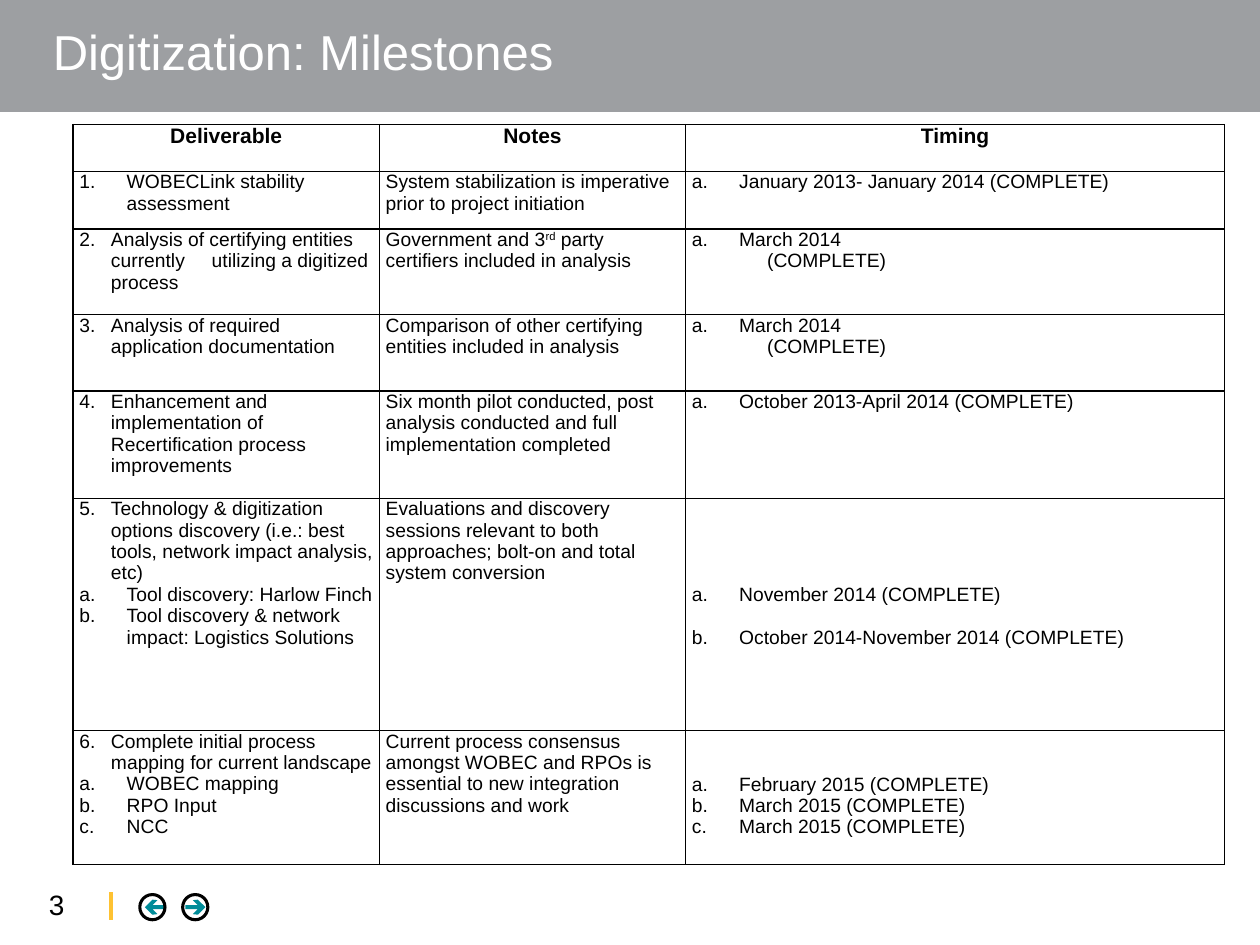
from collections import namedtuple

from lxml.etree import SubElement
from pptx import Presentation
from pptx.dml.color import RGBColor
from pptx.enum.shapes import MSO_CONNECTOR, MSO_SHAPE
from pptx.enum.text import MSO_ANCHOR, PP_ALIGN
from pptx.oxml.ns import qn
from pptx.util import Pt

Item = namedtuple("Item", "text scheme start left hanging before", defaults=(None, 1, 0, 0, 0))
LINE = 12.3


def color(hex_value):
    return RGBColor.from_string(hex_value)


def step(number, text, left=18):
    return Item(text, "arabicPeriod", number, left, left)


def letter(text, before=0):
    return Item(text, "alphaLcPeriod", 1, 27, 27, before)


class MilestoneSlide:
    font = "Arial"
    black = "000000"
    white = "FFFFFF"
    gray = "9D9FA2"
    teal = "008C99"
    yellow = "FEC232"

    def __init__(self, slide):
        self.shapes = slide.shapes

    def style(self, paragraph, size, ink, bold=False):
        paragraph.font.name = self.font
        paragraph.font.size = Pt(size)
        paragraph.font.bold = bold
        paragraph.font.color.rgb = color(ink)

    def text(self, content, x, y, width, height, size, ink, spacing=1.0):
        frame = self.shapes.add_textbox(Pt(x), Pt(y), Pt(width), Pt(height)).text_frame
        frame.margin_left = frame.margin_right = frame.margin_top = frame.margin_bottom = 0
        frame.word_wrap = True
        frame.vertical_anchor = MSO_ANCHOR.MIDDLE
        paragraph = frame.paragraphs[0]
        paragraph.text = content
        paragraph.line_spacing = spacing
        self.style(paragraph, size, ink)

    def band(self, width, height):
        band = self.shapes.add_shape(MSO_SHAPE.RECTANGLE, 0, 0, Pt(width), Pt(height))
        band.shadow.inherit = False
        band.fill.solid()
        band.fill.fore_color.rgb = color(self.gray)
        band.line.fill.background()

    def divider(self, x, top, bottom):
        divider = self.shapes.add_connector(MSO_CONNECTOR.STRAIGHT, Pt(x), Pt(top), Pt(x), Pt(bottom))
        divider.line.color.rgb = color(self.yellow)
        divider.line.width = Pt(2)
        SubElement(divider._element.spPr, qn("a:effectLst"))

    def arrow(self, tip, middle, direction):
        upper = [(4.3, -4.3), (7.2, -4), (4.3, -1.1), (11.5, -1.1)]
        outline = upper + [(back, -rise) for back, rise in reversed(upper)]
        points = [(Pt(tip - direction * back), Pt(middle + rise)) for back, rise in outline]
        builder = self.shapes.build_freeform(Pt(tip), Pt(middle))
        builder.add_line_segments(points, close=True)
        arrow = builder.convert_to_shape()
        arrow.shadow.inherit = False
        arrow.fill.solid()
        arrow.fill.fore_color.rgb = color(self.teal)
        arrow.line.fill.background()

    def ring(self, x, y, size):
        ring = self.shapes.add_shape(MSO_SHAPE.OVAL, Pt(x), Pt(y), Pt(size), Pt(size))
        ring.shadow.inherit = False
        ring.fill.background()
        ring.line.color.rgb = color(self.black)
        ring.line.width = Pt(1.75)

    def paragraph(self, paragraph, item, size, bold):
        properties = paragraph._p.get_or_add_pPr()
        if item.before:
            paragraph.space_before = Pt(item.before)
        if item.left:
            properties.set("marL", str(Pt(item.left)))
            properties.set("indent", str(-Pt(item.hanging)))
        if item.scheme:
            SubElement(properties, qn("a:buFont"), typeface=self.font)
            SubElement(properties, qn("a:buAutoNum"), type=item.scheme, startAt=str(item.start))
        runs = [(item.text, {})] if isinstance(item.text, str) else item.text
        for content, attributes in runs:
            run = paragraph.add_run()
            run.text = content
            for key, value in attributes.items():
                run._r.get_or_add_rPr().set(key, value)
        self.style(paragraph, size, self.black, bold)

    def cell(self, cell, items, skipped_lines=0, header=False):
        cell.margin_left = cell.margin_right = Pt(3.6)
        cell.margin_top = Pt(skipped_lines * LINE)
        cell.margin_bottom = 0
        properties = cell._tc.get_or_add_tcPr()
        for side in ("lnL", "lnR", "lnT", "lnB"):
            border = SubElement(properties, qn(f"a:{side}"), w=str(Pt(1)))
            fill = SubElement(border, qn("a:solidFill"))
            SubElement(fill, qn("a:srgbClr"), val=self.black)
        cell.fill.background()
        frame = cell.text_frame
        for index, item in enumerate(items):
            paragraph = frame.paragraphs[0] if index == 0 else frame.add_paragraph()
            if header:
                paragraph.alignment = PP_ALIGN.CENTER
            self.paragraph(paragraph, item, 12 if header else 11, header)

    def table(self, x, y, widths, heights, headings, milestones):
        table = self.shapes.add_table(
            len(heights), len(widths), Pt(x), Pt(y), Pt(sum(widths)), Pt(sum(heights))
        ).table
        table.first_row = table.horz_banding = False
        for column, width in zip(table.columns, widths):
            column.width = Pt(width)
        for row, height in zip(table.rows, heights):
            row.height = Pt(height)
        for cell, heading in zip(table.rows[0].cells, headings):
            self.cell(cell, [Item(heading)], header=True)
        for row, (deliverable, notes, timing, skipped) in enumerate(milestones, 1):
            self.cell(table.cell(row, 0), deliverable)
            self.cell(table.cell(row, 1), [Item(notes)])
            self.cell(table.cell(row, 2), timing, skipped)


def main():
    deck = Presentation()
    deck.slide_width, deck.slide_height = Pt(720), Pt(540)
    page = MilestoneSlide(deck.slides.add_slide(deck.slide_layouts[6]))

    page.text("3", 28, 507, 39, 19.5, 16, page.black)
    page.divider(63.4, 509.8, 525.6)
    for tip, ring_left, direction in ((117.4, 104.4, 1), (82.8, 79.9, -1)):
        page.arrow(tip, 518.4, direction)
        page.ring(ring_left, 511.2, 14.4)
    page.band(720, 64)
    page.text("Digitization: Milestones", 30.2, 0, 659.5, 62.6, 28, page.white, 0.9)

    march = [letter("March 2014"), Item("(COMPLETE)", left=43)]
    certifying = [
        ("Analysis of certifying entities currently", {}),
        (" ", {"spc": "1220"}),
        ("utilizing a digitized process", {}),
    ]
    government = [
        ("Government and 3", {}),
        ("rd", {"baseline": "30000"}),
        (" party certifiers included in analysis", {}),
    ]
    milestones = [
        ([step(1, "WOBECLink stability assessment", 27)],
         "System stabilization is imperative prior to project initiation",
         [letter("January 2013- January 2014 (COMPLETE)")], 0),
        ([step(2, certifying)], government, march, 0),
        ([step(3, "Analysis of required application documentation")],
         "Comparison of other certifying entities included in analysis", march, 0),
        ([step(4, "Enhancement and implementation of Recertification process improvements")],
         "Six month pilot conducted, post analysis conducted and full implementation completed",
         [letter("October 2013-April 2014 (COMPLETE)")], 0),
        ([step(5, "Technology & digitization options discovery (i.e.: best tools, "
                  "network impact analysis, etc)"),
          letter("Tool discovery: Harlow Finch"),
          letter("Tool discovery & network impact: Logistics Solutions")],
         "Evaluations and discovery sessions relevant to both approaches; "
         "bolt-on and total system conversion",
         [letter("November 2014 (COMPLETE)"),
          letter("October 2014-November 2014 (COMPLETE)", LINE)], 4),
        ([step(6, "Complete initial process mapping for current landscape"),
          letter("WOBEC mapping"), letter("RPO Input"), letter("NCC")],
         "Current process consensus amongst WOBEC and RPOs is essential to "
         "new integration discussions and work",
         [letter("February 2015 (COMPLETE)"), letter("March 2015 (COMPLETE)"),
          letter("March 2015 (COMPLETE)")], 2),
    ]
    page.table(41.8, 71.2, (175, 175, 308), (26.8, 32.8, 49, 43.7, 61.3, 132.8, 76.5),
               ("Deliverable", "Notes", "Timing"), milestones)
    deck.save("out.pptx")


if __name__ == "__main__":
    main()
